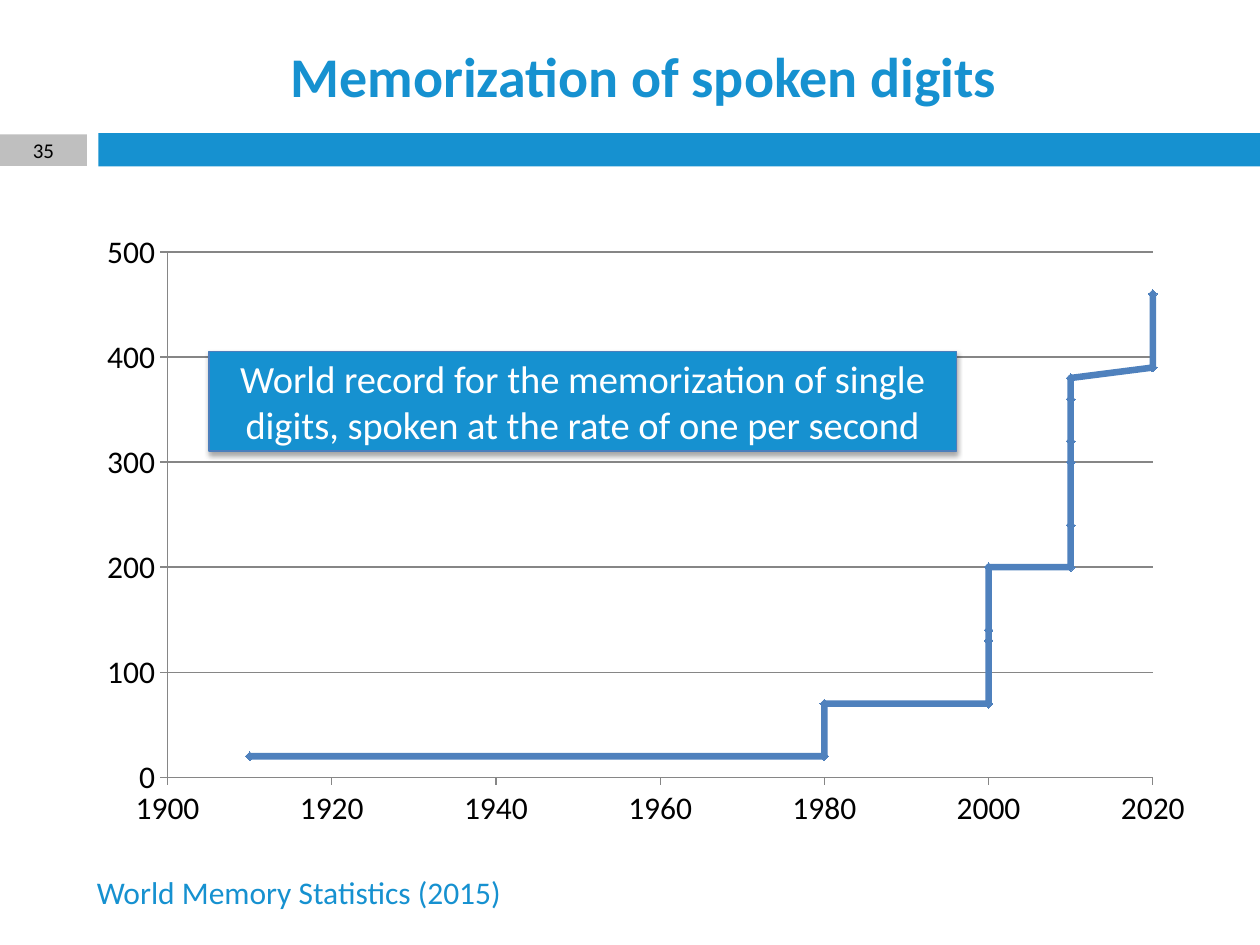
from lxml.etree import SubElement
from pptx import Presentation
from pptx.chart.data import XyChartData
from pptx.dml.color import RGBColor
from pptx.enum.chart import XL_CHART_TYPE as ChartType, XL_MARKER_STYLE as Marker, XL_TICK_MARK as Tick
from pptx.enum.shapes import MSO_SHAPE as Preset
from pptx.enum.text import MSO_ANCHOR as Anchor, PP_ALIGN as Align
from pptx.oxml import parse_xml
from pptx.oxml.ns import nsdecls, qn
from pptx.util import Inches, Pt

WIDTH, HEIGHT = Inches(10), Inches(7.5)
FONT = "Calibri"
COLORS = {"accent": "1691D0", "badge": "BFBFBF", "series": "4F81BD", "edge": "4B7EBC",
          "axis": "868686", "text": "000000", "light": "FFFFFF"}
RECORDS = [(1910, 20), (1980, 20), (1980, 70), (2000, 70), (2000, 130), (2000, 130),
           (2000, 140), (2000, 140), (2000, 200), (2010, 200), (2010, 200), (2010, 200),
           (2010, 240), (2010, 300), (2010, 320), (2010, 360), (2010, 380), (2020, 390),
           (2020, 460)]
PLOT_SHARES = {"x": 0.66 / 8.92, "y": 0.25 / 4.92, "w": 7.82 / 8.92, "h": 4.17 / 4.92}


def color(role):
    """Return the colour of a role."""
    return RGBColor.from_string(COLORS[role])


def inches(*lengths):
    """Turn a left, top, width, height box into lengths."""
    return [Inches(length) for length in lengths]


def style_font(font, size, role, bold=False):
    """Format a font."""
    font.name, font.size, font.bold = FONT, Pt(size), bold
    font.color.rgb = color(role)


def style_line(line, role, width=0.75):
    """Format a line."""
    line.color.rgb = color(role)
    line.width = Pt(width)


def write(frame, words, size, role, align=Align.CENTER, bold=False):
    """Write one run into a text frame."""
    frame.word_wrap = True
    frame.vertical_anchor = Anchor.MIDDLE
    paragraph = frame.paragraphs[0]
    paragraph.alignment = align
    run = paragraph.add_run()
    run.text = words
    style_font(run.font, size, role, bold)


def add_block(slide, box, role):
    """Add a flat rectangle."""
    block = slide.shapes.add_shape(Preset.RECTANGLE, *box)
    block.shadow.inherit = False
    block.fill.solid()
    block.fill.fore_color.rgb = color(role)
    block.line.fill.background()
    return block


def add_header(slide, box, words, number):
    """Place the title over a band with a page number badge."""
    left, top, width, height = box
    band_left, band_height = left + int(width * 0.078), int(height * 0.2)
    band_top = top + height - band_height
    add_block(slide, (band_left, band_top, left + width - band_left, band_height), "accent")
    badge = add_block(slide, (left, band_top + Inches(0.01), Inches(0.69), Inches(0.25)), "badge")
    badge.text_frame.margin_top = badge.text_frame.margin_bottom = 0
    write(badge.text_frame, number, 12, "text")
    title = slide.shapes.title
    title.left, title.top = band_left, top + Inches(0.26)
    title.width, title.height = int(width * 0.866), Inches(0.68)
    write(title.text_frame, words, 32, "accent", bold=True)


def set_plot_layout(chart):
    """Fix the inner plot area as shares of the chart."""
    plot_area = chart._chartSpace.chart.plotArea
    for old in plot_area.findall(qn("c:layout")):
        plot_area.remove(old)
    layout = parse_xml(f"<c:layout {nsdecls('c')}><c:manualLayout/></c:layout>")
    settings = [("layoutTarget", "inner"), ("xMode", "edge"), ("yMode", "edge"),
                *PLOT_SHARES.items()]
    for tag, setting in settings:
        SubElement(layout[0], qn(f"c:{tag}")).set("val", str(setting))
    plot_area.insert(0, layout)


def style_axis(axis, low, high, step):
    """Scale and format an axis."""
    axis.minimum_scale, axis.maximum_scale, axis.major_unit = low, high, step
    axis.major_tick_mark, axis.minor_tick_mark = Tick.OUTSIDE, Tick.NONE
    style_line(axis.format.line, "axis")
    axis.tick_labels.number_format = "General"
    axis.tick_labels.number_format_is_linked = False
    style_font(axis.tick_labels.font, 18, "text")


def add_record_chart(slide, box):
    """Plot the record by year."""
    records = XyChartData()
    line = records.add_series("Series 1")
    for year, digits in RECORDS:
        line.add_data_point(year, digits)
    chart = slide.shapes.add_chart(ChartType.XY_SCATTER_LINES, *box, records).chart
    chart.has_legend = chart.has_title = False
    style_font(chart.font, 10, "text")
    set_plot_layout(chart)
    style_axis(chart.category_axis, 1900, 2020, 20)
    style_axis(chart.value_axis, 0, 500, 100)
    chart.category_axis.has_major_gridlines = False
    chart.value_axis.has_major_gridlines = True
    style_line(chart.value_axis.major_gridlines.format.line, "axis")
    plot = chart.plots[0]
    plot.vary_by_categories = False
    series = plot.series[0]
    series.smooth = False
    style_line(series.format.line, "series", 3.75)
    series.marker.style, series.marker.size = Marker.DIAMOND, 5
    series.marker.format.fill.solid()
    series.marker.format.fill.fore_color.rgb = color("series")
    style_line(series.marker.format.line, "series")


def add_callout(slide, box, words):
    """Add the explanation with a soft shadow below it."""
    callout = add_block(slide, box, "accent")
    style_line(callout.line, "edge")
    effects = callout._element.spPr.find(qn("a:effectLst"))
    effects.append(parse_xml(
        f'<a:outerShdw {nsdecls("a")} blurRad="{Pt(3.1)}" dist="{Pt(1.8)}" dir="5400000" '
        f'rotWithShape="0"><a:srgbClr val="{COLORS["text"]}"><a:alpha val="35000"/>'
        '</a:srgbClr></a:outerShdw>'))
    write(callout.text_frame, words, 22, "light")


def add_source(slide, box, words):
    """Add the source line."""
    source = slide.shapes.add_textbox(*box)
    write(source.text_frame, words, 18, "accent", Align.LEFT)


def main():
    """Build the slide."""
    deck = Presentation()
    deck.slide_width, deck.slide_height = WIDTH, HEIGHT
    slide = deck.slides.add_slide(deck.slide_layouts.get_by_name("Title Only"))
    add_header(slide, inches(0, 0, 10, 1.32), "Memorization of spoken digits", "35")
    add_record_chart(slide, inches(0.67, 1.75, 8.92, 4.92))
    add_source(slide, inches(0.67, 6.88, 6.17, 0.4), "World Memory Statistics (2015)")
    add_callout(slide, inches(1.66, 2.79, 5.93, 0.79),
                "World record for the memorization of single digits, "
                "spoken at the rate of one per second")
    deck.save("out.pptx")


if __name__ == "__main__":
    main()
